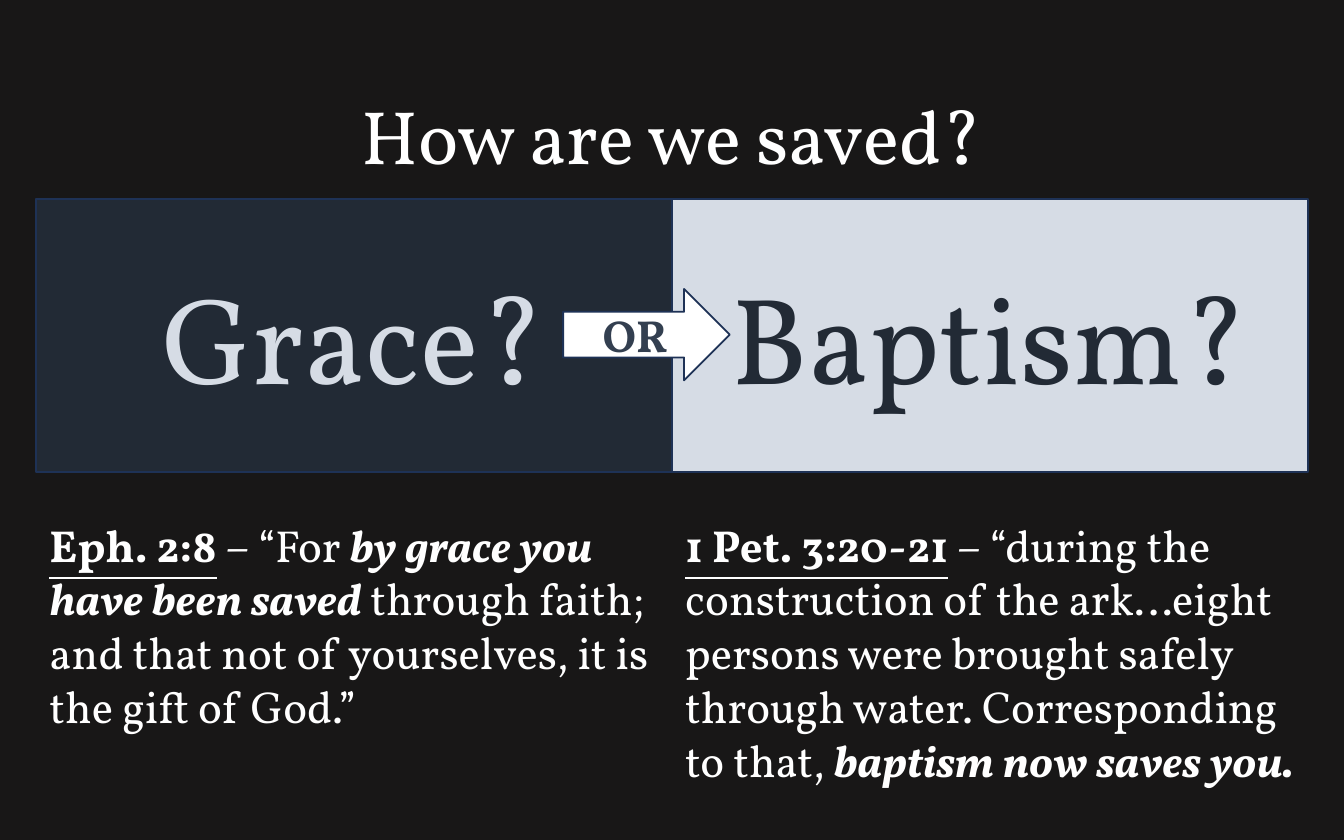
from dataclasses import dataclass

from pptx import Presentation
from pptx.dml.color import RGBColor
from pptx.enum.shapes import MSO_SHAPE
from pptx.enum.text import MSO_ANCHOR, MSO_AUTO_SIZE, PP_ALIGN
from pptx.slide import Slide
from pptx.text.text import TextFrame
from pptx.util import Inches, Pt

FONT = "Vollkorn"
COLORS = {
    "back": "181717", "navy": "222A35", "pale": "D6DCE5",
    "line": "1E3256", "slate": "333F50", "white": "FFFFFF",
}
EDGE, MID = 0.27, 5
HALF = MID - EDGE


@dataclass
class Block:
    kind: MSO_SHAPE
    box: tuple[float, float, float, float]
    text: str
    size: float
    fill: str
    ink: str
    bold: bool = False


@dataclass
class Verse:
    left: float
    width: float
    height: float
    runs: list[tuple[str, str]]  # text and style letters: b, i, u


def color(name: str) -> RGBColor:
    return RGBColor.from_string(COLORS[name])


def style(frame: TextFrame, size: float, ink: str, align: PP_ALIGN) -> None:
    frame.word_wrap = True
    para = frame.paragraphs[0]
    para.alignment = align
    para.font.name = FONT
    para.font.size = Pt(size)
    para.font.color.rgb = color(ink)


def add_block(slide: Slide, block: Block) -> None:
    shape = slide.shapes.add_shape(block.kind, *map(Inches, block.box))
    shape.shadow.inherit = False
    shape.fill.solid()
    shape.fill.fore_color.rgb = color(block.fill)
    shape.line.color.rgb = color("line")
    shape.line.width = Pt(1)
    frame = shape.text_frame
    frame.text = block.text
    frame.vertical_anchor = MSO_ANCHOR.MIDDLE
    style(frame, block.size, block.ink, PP_ALIGN.CENTER)
    frame.paragraphs[0].font.bold = block.bold


def add_verse(slide: Slide, verse: Verse) -> None:
    box = (verse.left, 3.8, verse.width, verse.height)
    frame = slide.shapes.add_textbox(*map(Inches, box)).text_frame
    style(frame, 24, "white", PP_ALIGN.LEFT)
    frame.auto_size = MSO_AUTO_SIZE.SHAPE_TO_FIT_TEXT
    for text, marks in verse.runs:
        run = frame.paragraphs[0].add_run()
        run.text = text
        run.font.bold = "b" in marks
        run.font.italic = "i" in marks
        run.font.underline = "u" in marks


def add_title(slide: Slide, text: str) -> None:
    title = slide.shapes.title
    title.left, title.top = Inches(1.89), Inches(0.61)
    title.width, title.height = Inches(6.22), Inches(0.78)
    frame = title.text_frame
    frame.text = text
    frame.vertical_anchor = MSO_ANCHOR.TOP
    frame.auto_size = MSO_AUTO_SIZE.SHAPE_TO_FIT_TEXT
    style(frame, 40.5, "white", PP_ALIGN.CENTER)


BLOCKS = [
    Block(MSO_SHAPE.RECTANGLE, (EDGE, 1.48, HALF, 2.03),
          "Grace?", 66, "navy", "pale"),
    Block(MSO_SHAPE.RECTANGLE, (MID, 1.48, HALF, 2.03),
          "Baptism?", 66, "pale", "navy"),
    Block(MSO_SHAPE.RIGHT_ARROW, (4.19, 2.15, 1.24, 0.68),
          "OR", 24, "white", "slate", True),
]
VERSES = [
    Verse(EDGE, HALF, 1.72, [
        ("Eph. 2:8", "bu"),
        (" – “For ", ""),
        ("by grace you have been saved ", "bi"),
        ("through faith; and that not of yourselves, "
         "it is the gift of God.”", ""),
    ]),
    Verse(MID, 4.91, 2.12, [
        ("1 Pet. 3:20-21", "bu"),
        (" – “during the construction of the ark…eight persons were "
         "brought safely through water. Corresponding to that, ", ""),
        ("baptism now saves you.", "bi"),
    ]),
]


def main() -> None:
    deck = Presentation()
    deck.slide_width, deck.slide_height = Inches(10), Inches(6.25)
    slide = deck.slides.add_slide(deck.slide_layouts[5])
    slide.background.fill.solid()
    slide.background.fill.fore_color.rgb = color("back")

    # Heading, panels with the arrow, then the verses
    add_title(slide, "How are we saved?")
    for block in BLOCKS:
        add_block(slide, block)
    for verse in VERSES:
        add_verse(slide, verse)

    deck.save("out.pptx")


if __name__ == "__main__":
    main()
